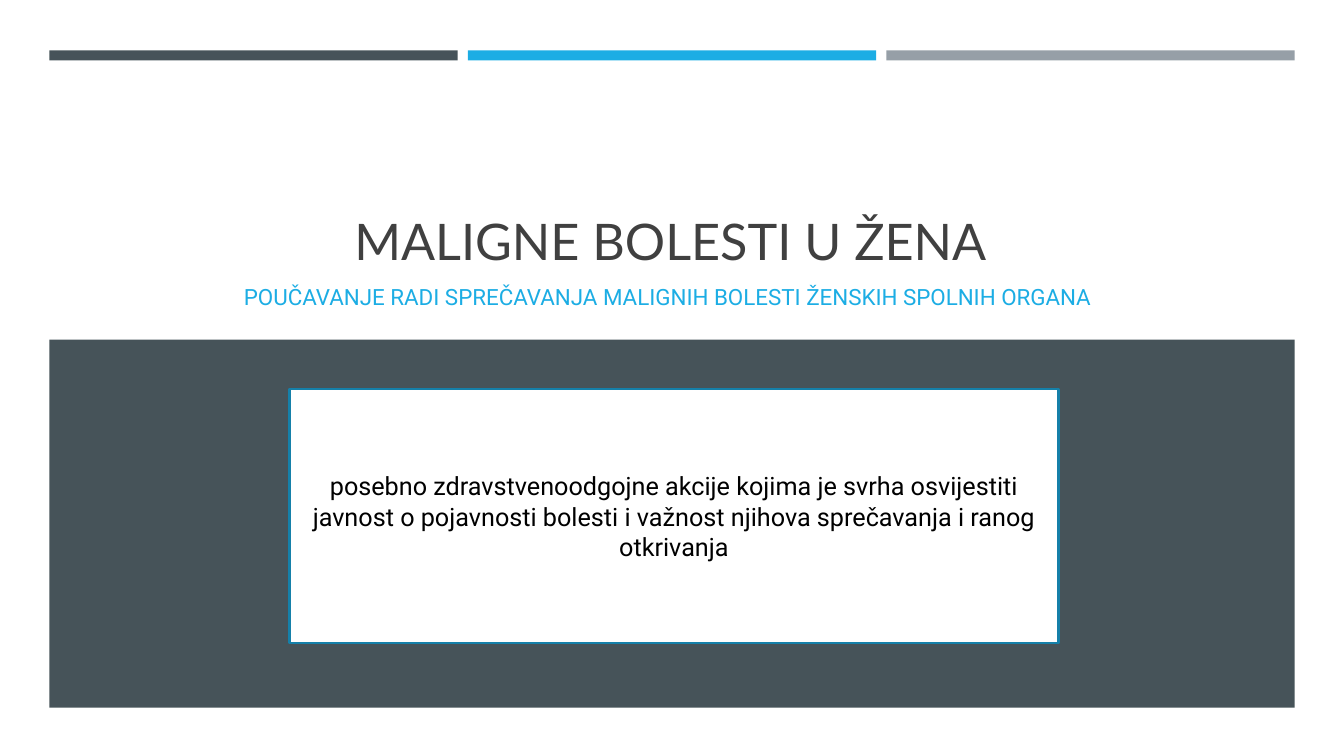
from dataclasses import dataclass

from pptx import Presentation
from pptx.dml.color import RGBColor
from pptx.enum.shapes import MSO_SHAPE
from pptx.enum.text import MSO_ANCHOR, MSO_AUTO_SIZE, PP_ALIGN
from pptx.util import Inches, Pt

MARGIN, COLUMN, GUTTER = 0.49, 4.05, 0.1
SLATE, BLUE, GREY, WHITE = "465359", "1CADE4", "969FA7", "FFFFFF"


@dataclass(frozen=True)
class Area:
    """A rectangle on the slide, in inches."""
    left: float
    top: float
    width: float
    height: float


@dataclass(frozen=True)
class Wording:
    """A centred line of text with its look."""
    text: str
    font: str
    size: int
    color: str
    anchor: MSO_ANCHOR


def rgb(color: str) -> RGBColor:
    """Turn a hex string into a colour."""
    return RGBColor.from_string(color)


def place(shape, area: Area) -> None:
    """Move a shape to an area."""
    shape.left, shape.top = Inches(area.left), Inches(area.top)
    shape.width, shape.height = Inches(area.width), Inches(area.height)


def write(shape, wording: Wording):
    """Write centred text into a shape and return its paragraph."""
    frame = shape.text_frame
    frame.word_wrap = True
    frame.auto_size = MSO_AUTO_SIZE.NONE
    frame.vertical_anchor = wording.anchor
    paragraph = frame.paragraphs[0]
    paragraph.alignment = PP_ALIGN.CENTER
    run = paragraph.add_run()
    run.text = wording.text
    run.font.name = wording.font
    run.font.size = Pt(wording.size)
    run.font.color.rgb = rgb(wording.color)
    return paragraph


def add_block(slide, area: Area, fill: str):
    """Add a flat rectangle without outline."""
    block = slide.shapes.add_shape(MSO_SHAPE.RECTANGLE, 0, 0, 0, 0)
    place(block, area)
    block.shadow.inherit = False
    block.fill.solid()
    block.fill.fore_color.rgb = rgb(fill)
    block.line.fill.background()
    return block


def main() -> None:
    """Build the title slide and save it."""
    deck = Presentation()
    deck.slide_width, deck.slide_height = Inches(13.33), Inches(7.5)
    slide = deck.slides.add_slide(deck.slide_layouts[0])

    for column, color in enumerate((SLATE, BLUE, GREY)):
        left = MARGIN + column * (COLUMN + GUTTER)
        add_block(slide, Area(left, 0.5, COLUMN, 0.1), color)
    panel_width = 3 * COLUMN + 2 * GUTTER
    add_block(slide, Area(MARGIN, 3.37, panel_width, 3.65), SLATE)

    title, subtitle = slide.shapes.title, slide.placeholders[1]
    place(title, Area(0.64, 1.12, 12.02, 1.61))
    write(title, Wording("MALIGNE BOLESTI U ŽENA", "Lato", 36, "404040", MSO_ANCHOR.BOTTOM))

    place(subtitle, Area(0.64, 2.73, 12.02, 0.65))
    topic = write(subtitle, Wording(
        "POUČAVANJE RADI SPREČAVANJA MALIGNIH BOLESTI ŽENSKIH SPOLNIH ORGANA ",
        "Roboto", 16, BLUE, MSO_ANCHOR.TOP))
    topic.line_spacing = 1.1
    topic.space_after = Pt(6)

    purpose = add_block(slide, Area(2.87, 3.86, 7.63, 2.52), WHITE)
    purpose.line.color.rgb = rgb("1580A9")
    purpose.line.width = Pt(1.75)
    write(purpose, Wording(
        "posebno zdravstvenoodgojne akcije kojima je svrha osvijestiti javnost "
        "o pojavnosti bolesti i važnost njihova sprečavanja i ranog otkrivanja",
        "Roboto", 18, "000000", MSO_ANCHOR.MIDDLE))

    deck.save("out.pptx")


if __name__ == "__main__":
    main()
